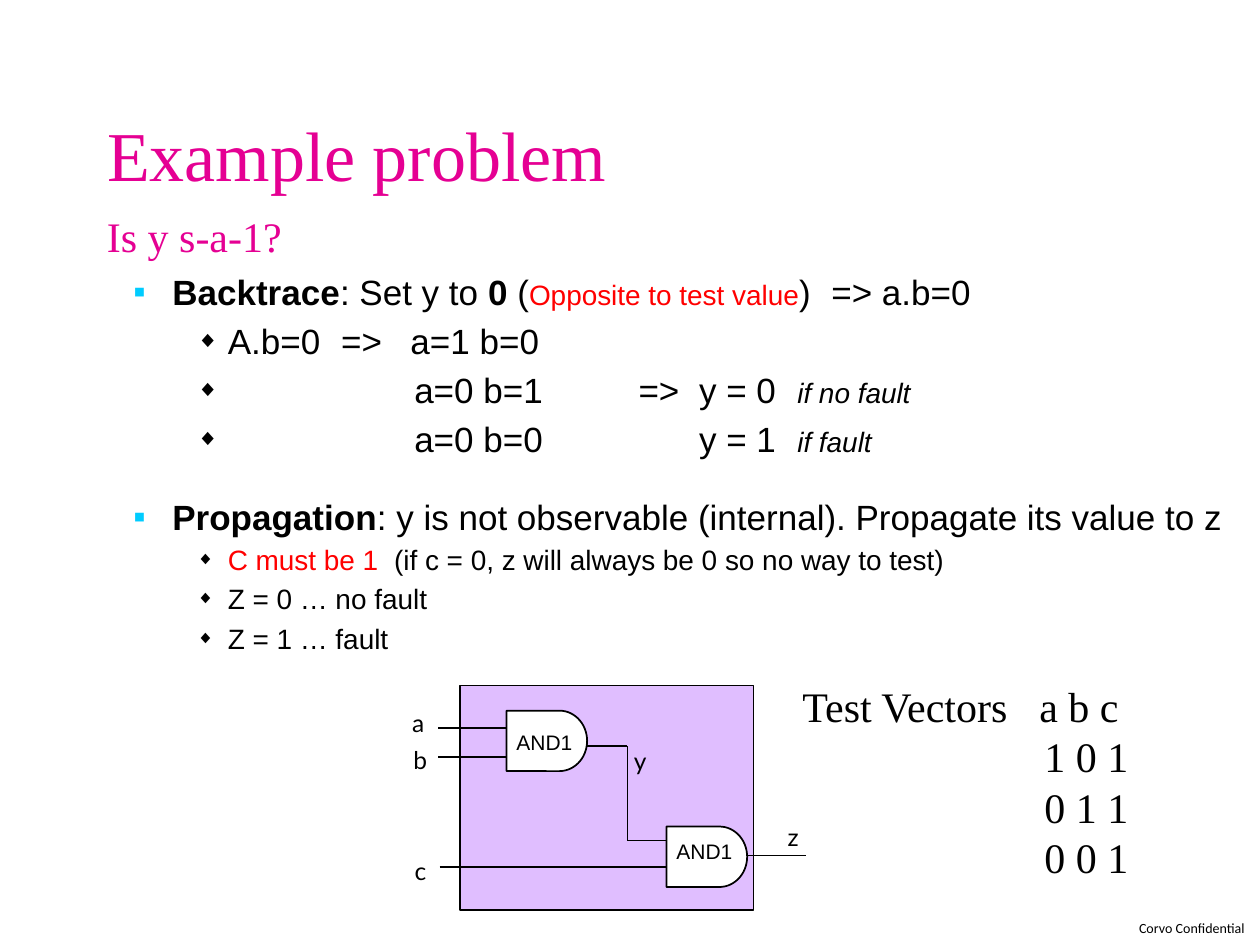
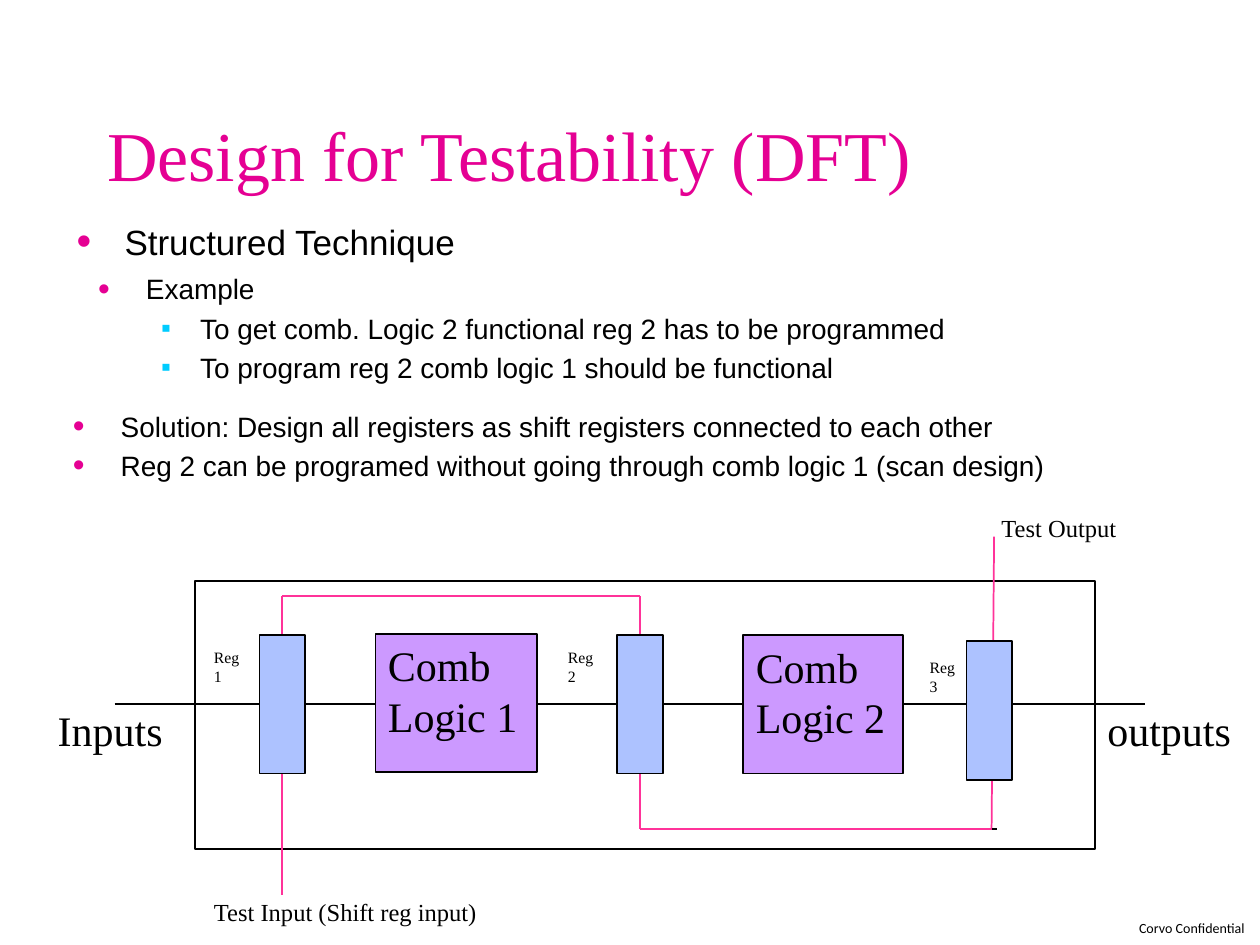
"""Build two slides on fault testing of logic circuits and scan design."""
import math

import lxml.etree
import pptx
import pptx.dml.color
import pptx.enum.shapes
import pptx.enum.text
import pptx.oxml.ns
import pptx.util

Inches = pptx.util.Inches
qn = pptx.oxml.ns.qn
BLACK, WHITE, RED = "000000", "FFFFFF", "FF0000"
MAGENTA, CYAN, PINK = "E50093", "00CCFF", "FF3399"
LILAC, VIOLET, BLUE = "E0BEFF", "CC99FF", "ADC2FF"
SERIF, SANS = "Times New Roman", "Arial"
BULLETS = {
    "dot": (0.38, -0.38, "•", MAGENTA, 120),
    "square": (0.81, -0.31, "▪", CYAN, 100),
    "diamond": (1.25, -0.25, "◆", BLACK, 65),
    "far diamond": (2.73, -1.73, "◆", BLACK, 65),
}
BOLD, ITALIC = {"bold": True}, {"size": 16, "italic": True}


def write(frame, paragraphs, size, font=SERIF, color=BLACK, margins=(0.1, 0.05), wrap=True):
    """Fill a text frame with (bullet, tab stops, runs) paragraphs; each run is (text, format)."""
    side, edge = map(Inches, margins)
    settings = {"margin_left": side, "margin_right": side, "margin_top": edge, "margin_bottom": edge,
                "word_wrap": wrap}
    for name, value in settings.items():
        setattr(frame, name, value)
    for index, (bullet, tabs, runs) in enumerate(paragraphs):
        paragraph = frame.paragraphs[0] if index == 0 else frame.add_paragraph()
        properties = paragraph._p.get_or_add_pPr()
        if bullet:
            left, indent, character, bullet_color, percent = BULLETS[bullet]
            properties.set("marL", str(Inches(left)))
            properties.set("indent", str(Inches(indent)))
            holder = lxml.etree.SubElement(properties, qn("a:buClr"))
            lxml.etree.SubElement(holder, qn("a:srgbClr"), val=bullet_color)
            lxml.etree.SubElement(properties, qn("a:buSzPct"), val=str(percent * 1000))
            lxml.etree.SubElement(properties, qn("a:buFont"), typeface=SANS)
            lxml.etree.SubElement(properties, qn("a:buChar"), char=character)
        if tabs:
            tab_list = lxml.etree.SubElement(properties, qn("a:tabLst"))
            for tab in tabs:
                lxml.etree.SubElement(tab_list, qn("a:tab"), pos=str(Inches(tab)), algn="l")
        paragraph.alignment = pptx.enum.text.PP_ALIGN.LEFT
        if bullet and index:
            paragraph.space_before = pptx.util.Pt(size / 5)
        for text, changes in runs:
            run = paragraph.add_run()
            run.text = text
            values = {"size": size, "name": font, "color": color, "bold": False, "italic": False} | changes
            run.font.color.rgb = pptx.dml.color.RGBColor.from_string(values.pop("color"))
            values["size"] = pptx.util.Pt(values["size"])
            for name, value in values.items():
                setattr(run.font, name, value)


def paint(shape, line, fill=None):
    """Give a shape or connector a thin line, an optional fill and no shadow."""
    shape.line.color.rgb = pptx.dml.color.RGBColor.from_string(line)
    shape.line.width = pptx.util.Pt(1)
    if hasattr(shape, "fill"):
        shape.shadow.inherit = False
        if fill:
            shape.fill.solid()
            shape.fill.fore_color.rgb = pptx.dml.color.RGBColor.from_string(fill)
        else:
            shape.fill.background()
    else:
        lxml.etree.SubElement(shape._element.spPr, qn("a:effectLst"))


gate_1, gate_2 = (4.02, 5.64), (5.29, 6.56)
label = {"size": 14, "font": "Lato", "margins": (0, 0), "wrap": False}
gate_label = {"size": 12, "font": SANS, "wrap": False}
bullet_16 = {"size": 16, "font": SANS}
bullet_20 = {"size": 20, "font": SANS}
register_y, register_size = 5.04, (0.36, 1.1)

slides = [
    {
        "title": "Example problem",
        "back": (3.65, 5.44, 2.33, 1.78, LILAC),
        "lines": [
            (BLACK, [(3.48, 5.78), (4.09, 5.78)]),
            (BLACK, [(3.48, 6.01), (4.09, 6.01)]),
            (BLACK, [(3.49, 6.88), (5.4, 6.88)]),
            (BLACK, [(4.48, 5.92), (4.98, 5.92), (4.98, 6.67), (5.39, 6.67)]),
            (BLACK, [(5.82, 6.79), (6.4, 6.79)]),
        ],
        "gates": [gate_1, gate_2],
        "blocks": [],
        "texts": [
            (3.27, 5.62, 0.11, 0.19, "a", label),
            (3.28, 5.91, 0.11, 0.19, "b", label),
            (3.29, 6.79, 0.12, 0.19, "c", label),
            (5.03, 5.92, 0.12, 0.19, "y", label),
            (6.25, 6.52, 0.11, 0.19, "z", label),
            (4, 5.74, 0.72, 0.3, "AND1", gate_label),
            (5.27, 6.61, 0.72, 0.3, "AND1", gate_label),
            (0.75, 1.62, 2.26, 0.5, "Is y s-a-1?", {"size": 24, "color": MAGENTA}),
            (0.46, 2.1, 9.54, 1.86, [
                ("square", [6.04], [("Backtrace", BOLD), (": Set y to ", {}), ("0", BOLD), (" (", {}),
                                    ("Opposite to test value", {"size": 16, "color": RED}),
                                    (")\t=> a.b=0", {})]),
                ("diamond", [2.15, 2.7], [("A.b=0\t=>\ta=1 b=0", {})]),
                ("far diamond", [4.51, 4.99, 5.77], [("a=0 b=1\t=>\ty = 0\t", {}), ("if no fault", ITALIC)]),
                ("far diamond", [4.99, 5.77], [("a=0 b=0\ty = 1\t", {}), ("if fault", ITALIC)]),
            ], bullet_20),
            (0.46, 3.88, 9.54, 1.49, [
                ("square", [], [("Propagation", BOLD | {"size": 20}),
                                (": y is not observable (internal). Propagate its value to z", {"size": 20})]),
                ("diamond", [2.57], [("C must be 1\t", {"color": RED}),
                                     ("(if c = 0, z will always be 0 so no way to test)", {})]),
                ("diamond", [], [("Z = 0 … no fault", {})]),
                ("diamond", [], [("Z = 1 … fault", {})]),
            ], bullet_16),
            (6.27, 5.35, 1.85, 0.5, "Test Vectors", {"size": 24, "wrap": False}),
            (8.15, 5.35, 1, 0.5, "a b c", {"size": 24, "wrap": False}),
            (8.19, 5.75, 1, 1.32, [(None, [], [(row, {})]) for row in ("1 0 1", "0 1 1", "0 0 1")],
             {"size": 24, "wrap": False}),
        ],
    },
    {
        "title": "Design for Testability (DFT)",
        "back": (1.55, 4.61, 7.14, 2.13, None),
        "lines": [
            (PINK, [(2.24, 7.1), (2.24, 4.73), (5.08, 4.73), (5.08, 6.58), (7.87, 6.58), (7.89, 4.26)]),
            (BLACK, [(0.91, 5.59), (2.98, 5.59)]),
            (BLACK, [(4.26, 5.59), (5.9, 5.59)]),
            (BLACK, [(7.17, 5.59), (9.09, 5.59)]),
            (BLACK, [(7.87, 6.58), (7.91, 6.58)]),
        ],
        "gates": [],
        "blocks": [
            (2.98, 5.03, 1.28, 1.1, VIOLET, "Comb Logic 1"),
            (5.9, 5.04, 1.27, 1.1, VIOLET, "Comb Logic 2"),
            (2.06, register_y, *register_size, BLUE, ""),
            (4.9, register_y, *register_size, BLUE, ""),
            (7.67, register_y + 0.05, *register_size, BLUE, ""),
        ],
        "texts": [
            (0.51, 1.7, 8.78, 0.7, [("dot", [], [("Structured Technique", {})])], bullet_20),
            (0.68, 2.11, 8.78, 0.7, [
                ("dot", [], [("Example", {})]),
                ("square", [], [("To get comb. Logic 2 functional reg 2 has to be programmed", {})]),
                ("square", [], [("To program reg 2 comb logic 1 should be functional", {})]),
            ], bullet_16),
            (0.48, 3.2, 9.49, 0.7, [
                ("dot", [], [("Solution: Design all registers as shift registers connected to each other", {})]),
                ("dot", [], [("Reg 2 can be programed without going through comb logic 1 (scan design)", {})]),
            ], bullet_16),
            (0.36, 5.54, 1.14, 0.5, "Inputs", {"size": 24}),
            (8.69, 5.54, 1.56, 0.5, "outputs", {"size": 24}),
            (1.6, 5.09, 0.46, 0.4, "Reg1", {"size": 9}),
            (4.41, 5.09, 0.46, 0.4, "Reg2", {"size": 9}),
            (7.28, 5.17, 0.46, 0.4, "Reg3", {"size": 9}),
            (7.85, 4.02, 1.13, 0.34, "Test Output", {"size": 14, "wrap": False}),
            (1.6, 7.07, 2.37, 0.34, "Test Input (Shift reg input)", {"size": 14, "wrap": False}),
        ],
    },
]
footer = (9.04, 7.3, 0.96, 0.13, "Corvo Confidential",
          {"size": 8, "font": "Calibri", "margins": (0, 0), "wrap": False})

presentation = pptx.Presentation()
presentation.slide_width, presentation.slide_height = Inches(10), Inches(7.5)
rectangle = pptx.enum.shapes.MSO_SHAPE.RECTANGLE
straight = pptx.enum.shapes.MSO_CONNECTOR.STRAIGHT

for content in slides:
    slide = presentation.slides.add_slide(presentation.slide_layouts[5])
    shapes = slide.shapes
    title = shapes.title
    for name, value in {"left": 0.75, "top": 0.52, "width": 8.5, "height": 1.4}.items():
        setattr(title, name, Inches(value))
    title.text_frame.vertical_anchor = pptx.enum.text.MSO_ANCHOR.MIDDLE
    write(title.text_frame, [(None, [], [(content["title"], {})])], 40, color=MAGENTA)

    *place, fill = content["back"]
    paint(shapes.add_shape(rectangle, *map(Inches, place)), BLACK, fill)

    for color, points in content["lines"]:
        for start, end in zip(points, points[1:]):
            paint(shapes.add_connector(straight, *map(Inches, start + end)), color)

    for left, top in content["gates"]:
        angles = [math.radians(degrees) for degrees in range(-90, 91, 6)]
        curve = [(Inches(left + 0.42 + 0.22 * math.cos(angle)), Inches(top + 0.24 + 0.24 * math.sin(angle)))
                 for angle in angles]
        outline = shapes.build_freeform(Inches(left), Inches(top))
        outline.add_line_segments(curve + [(Inches(left), Inches(top + 0.48))], close=True)
        paint(outline.convert_to_shape(), BLACK, WHITE)

    for *place, fill, text in content["blocks"]:
        block = shapes.add_shape(rectangle, *map(Inches, place))
        paint(block, BLACK, fill)
        if text:
            block.text_frame.vertical_anchor = pptx.enum.text.MSO_ANCHOR.TOP
            write(block.text_frame, [(None, [], [(text, {})])], 24)

    for *place, text, style in content["texts"] + [footer]:
        paragraphs = [(None, [], [(text, {})])] if isinstance(text, str) else text
        write(shapes.add_textbox(*map(Inches, place)).text_frame, paragraphs, **style)

presentation.save("out.pptx")
